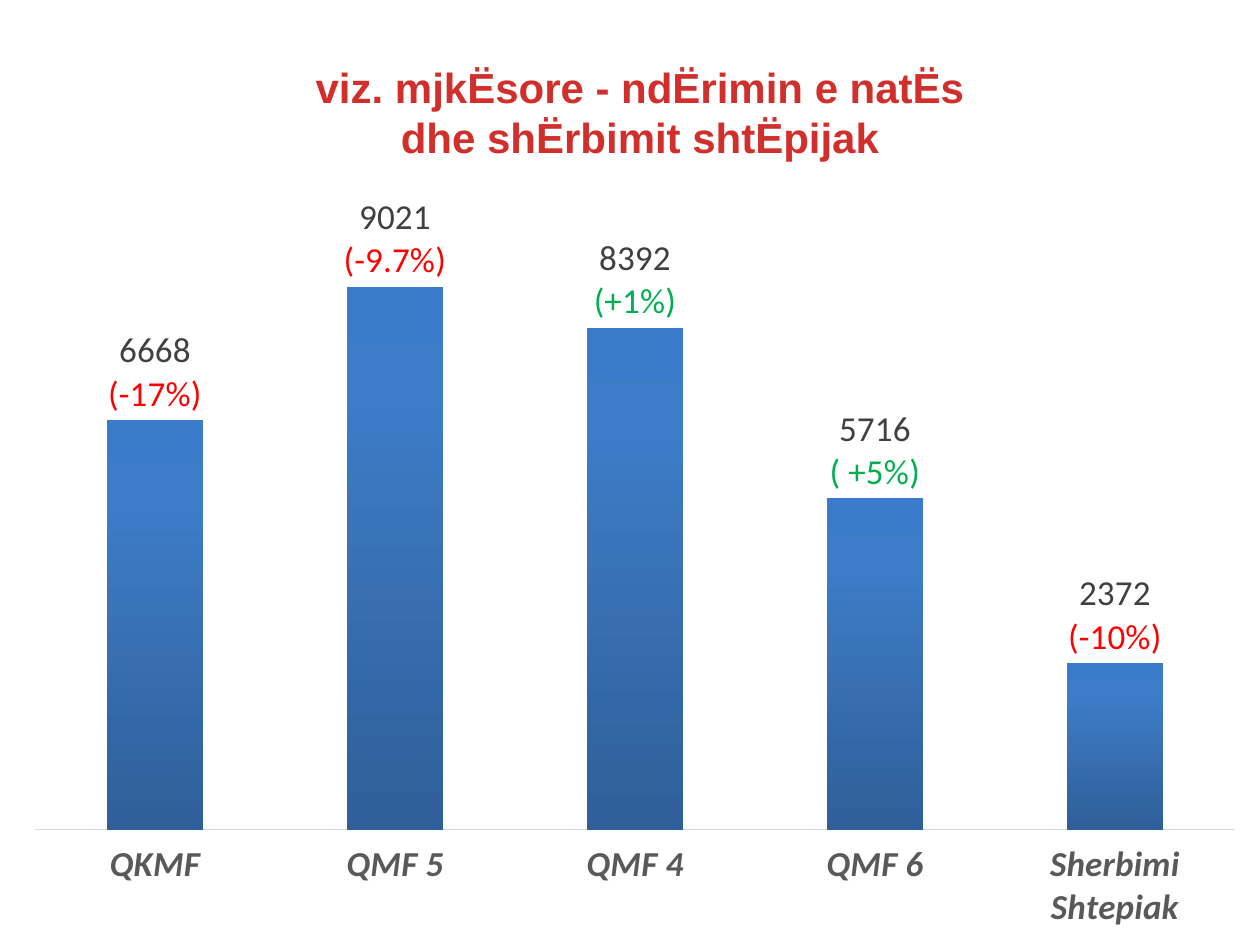
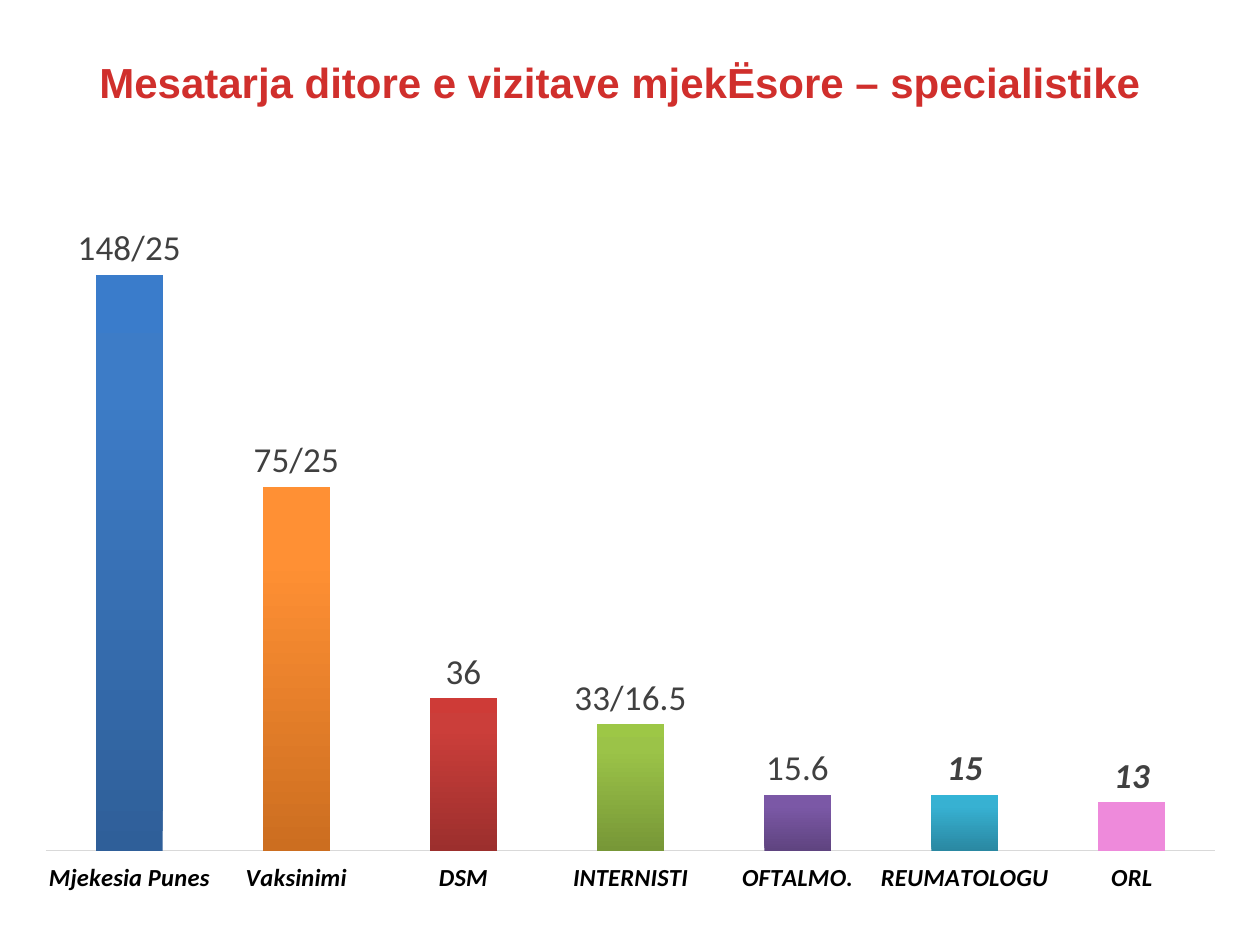
from copy import deepcopy
from dataclasses import dataclass

from pptx import Presentation
from pptx.chart.data import CategoryChartData
from pptx.dml.color import RGBColor
from pptx.enum.chart import XL_CHART_TYPE, XL_LABEL_POSITION, XL_TICK_LABEL_POSITION, XL_TICK_MARK
from pptx.enum.text import MSO_ANCHOR, MSO_AUTO_SIZE, PP_ALIGN
from pptx.oxml import parse_xml
from pptx.oxml.ns import nsdecls, qn
from pptx.util import Inches, Pt

COLUMN = XL_CHART_TYPE.COLUMN_CLUSTERED
OUTSIDE = XL_LABEL_POSITION.OUTSIDE_END
LOW = XL_TICK_LABEL_POSITION.LOW
NO_TICK = XL_TICK_MARK.NONE
MIDDLE = MSO_ANCHOR.MIDDLE
NO_FIT = MSO_AUTO_SIZE.NONE
CENTER = PP_ALIGN.CENTER

TITLE_RED = RGBColor(0xD0, 0x2F, 0x2C)
BLACK = RGBColor(0, 0, 0)
GRAY = RGBColor(0x59, 0x59, 0x59)
LABEL_GRAY = RGBColor(0x40, 0x40, 0x40)
AXIS_GRAY = RGBColor(0xD9, 0xD9, 0xD9)
DOWN_RED = RGBColor(0xFF, 0, 0)
UP_GREEN = RGBColor(0, 0xB0, 0x50)


def shades(*codes: str) -> tuple[RGBColor, ...]:
    return tuple(RGBColor.from_string(code) for code in codes)


BLUE = shades("2F5F99", "3D7CC7", "3A7CCB")
ORANGE = shades("CC6E20", "FF9034", "FF9136")
RED = shades("9C2F2D", "CB3E3A", "CE3B37")
GREEN = shades("779737", "9BC348", "9DC746")
PURPLE = shades("5F4480", "7B58A6", "7C57A8")
TEAL = shades("2A88A2", "37B1D2", "34B4D6")
PINK = shades("EE8ADB")
STOPS = (0, 0.8, 1)


@dataclass(frozen=True)
class Bar:
    name: str
    value: float
    label: str = ""
    change: str = ""
    fill: tuple[RGBColor, ...] = BLUE


@dataclass(frozen=True)
class ChartSlide:
    title: str
    title_box: tuple[float, float, float, float]
    chart_box: tuple[float, float, float, float]
    plot_height: float
    axis_max: float
    axis_size: int
    axis_color: RGBColor
    bars: tuple[Bar, ...]


SLIDES = (
    ChartSlide(
        "viz. mjkËsore - ndËrimin e natËs\ndhe shËrbimit shtËpijak",
        (0.58, 0.42, 9, 0.93), (0.08, 1.08, 9.92, 6.33),
        0.85, 6000, 20, GRAY,
        (
            Bar("QKMF", 3625, "6668", "(-17%)"),
            Bar("QMF 5", 4808, "9021", "(-9.7%)"),
            Bar("QMF 4", 4442, "8392", "(+1%)"),
            Bar("QMF 6", 2933, "5716", "( +5%)"),
            Bar("Sherbimi Shtepiak", 1474, "2372", "(-10%)"),
        ),
    ),
    ChartSlide(
        "Mesatarja ditore e vizitave mjekËsore – specialistike",
        (-0.08, 0.4, 10, 0.5), (0.17, 1.33, 9.67, 5.83),
        0.91, 180, 14, BLACK,
        (
            Bar("Mjekesia Punes", 155, "148/25"),
            Bar("Vaksinimi", 98, "75/25", fill=ORANGE),
            Bar("DSM", 41, "36", fill=RED),
            Bar("INTERNISTI", 34, "33/16.5", fill=GREEN),
            Bar("OFTALMO.", 15, "15.6", fill=PURPLE),
            Bar("REUMATOLOGU", 15, fill=TEAL),
            Bar("ORL", 13, fill=PINK),
        ),
    ),
)


def set_font(font, size: int, color: RGBColor, bold: bool, italic: bool, name: str = "Calibri") -> None:
    font.name = name
    font.size = Pt(size)
    font.bold = bold
    font.italic = italic
    font.color.rgb = color


def add_title(s, spec_slide: ChartSlide) -> None:
    sp = s.shapes.title
    sp.left, sp.top, sp.width, sp.height = map(Inches, spec_slide.title_box)
    tf = sp.text_frame
    tf.text = spec_slide.title
    tf.word_wrap = True
    tf.auto_size = NO_FIT
    tf.vertical_anchor = MIDDLE
    for p in tf.paragraphs:
        p.alignment = CENTER
        set_font(p.font, 24, TITLE_RED, True, False, "Arial")


def fill_bar(point, colors: tuple[RGBColor, ...]) -> None:
    fmt = point.format
    if len(colors) == 1:
        fmt.fill.solid()
        fmt.fill.fore_color.rgb = colors[0]
        return
    fmt.fill.gradient()
    fmt.fill.gradient_angle = 90
    stop_list = next(fmt._element.iter(qn("a:gsLst")))
    stop_list.insert(1, deepcopy(stop_list[0]))
    for stop, position, color in zip(fmt.fill.gradient_stops, STOPS, colors):
        stop.position = position
        stop.color.rgb = color


def label_bar(point, bar: Bar) -> None:
    tf = point.data_label.text_frame
    p = tf.paragraphs[0]
    r = p.add_run()
    r.text = bar.label
    set_font(r.font, 20, LABEL_GRAY, False, False)
    if bar.change:
        r = tf.add_paragraph().add_run()
        r.text = bar.change
        set_font(r.font, 20, UP_GREEN if "+" in bar.change else DOWN_RED, False, False)
    point.data_label.position = OUTSIDE


def place_plot(chart, height: float) -> None:
    area = next(chart._chartSpace.iter(qn("c:plotArea")))
    for old in area.findall(qn("c:layout")):
        area.remove(old)
    sizes = "".join(
        f'<c:{tag} val="{value}"/>'
        for tag, value in (("x", 0.02), ("y", 0.02), ("w", 0.96), ("h", height))
    )
    area.insert(0, parse_xml(
        f'<c:layout {nsdecls("c")}><c:manualLayout><c:layoutTarget val="inner"/>'
        f'<c:xMode val="edge"/><c:yMode val="edge"/>{sizes}</c:manualLayout></c:layout>'
    ))


def add_bar_chart(s, content: ChartSlide) -> None:
    data = CategoryChartData()
    data.categories = [bar.name for bar in content.bars]
    data.add_series("Series 1", [bar.value for bar in content.bars])
    chart = s.shapes.add_chart(COLUMN, *map(Inches, content.chart_box), data).chart
    chart.has_title = False
    chart.has_legend = False
    set_font(chart.font, 10, BLACK, False, False)
    place_plot(chart, content.plot_height)

    value_axis = chart.value_axis
    value_axis.visible = False
    value_axis.has_major_gridlines = False
    value_axis.minimum_scale = 0
    value_axis.maximum_scale = content.axis_max
    axis = chart.category_axis
    axis.major_tick_mark = NO_TICK
    axis.minor_tick_mark = NO_TICK
    axis.tick_label_position = LOW
    axis.format.line.color.rgb = AXIS_GRAY
    axis.format.line.width = Pt(0.75)
    set_font(axis.tick_labels.font, content.axis_size, content.axis_color, True, True)

    plot = chart.plots[0]
    plot.gap_width = 150
    plot.overlap = -25
    plot.vary_by_categories = False
    series = plot.series[0]
    labels = series.data_labels
    labels.show_value = True
    labels.position = OUTSIDE
    set_font(labels.font, 20, LABEL_GRAY, True, True)
    for i, bar in enumerate(content.bars):
        fill_bar(series.points[i], bar.fill)
        if bar.label:
            label_bar(series.points[i], bar)


def main() -> None:
    prs = Presentation()
    prs.slide_width = Inches(10)
    prs.slide_height = Inches(7.5)
    for content in SLIDES:
        s = prs.slides.add_slide(prs.slide_layouts[5])
        add_title(s, content)
        add_bar_chart(s, content)
    prs.save("out.pptx")


if __name__ == "__main__":
    main()
